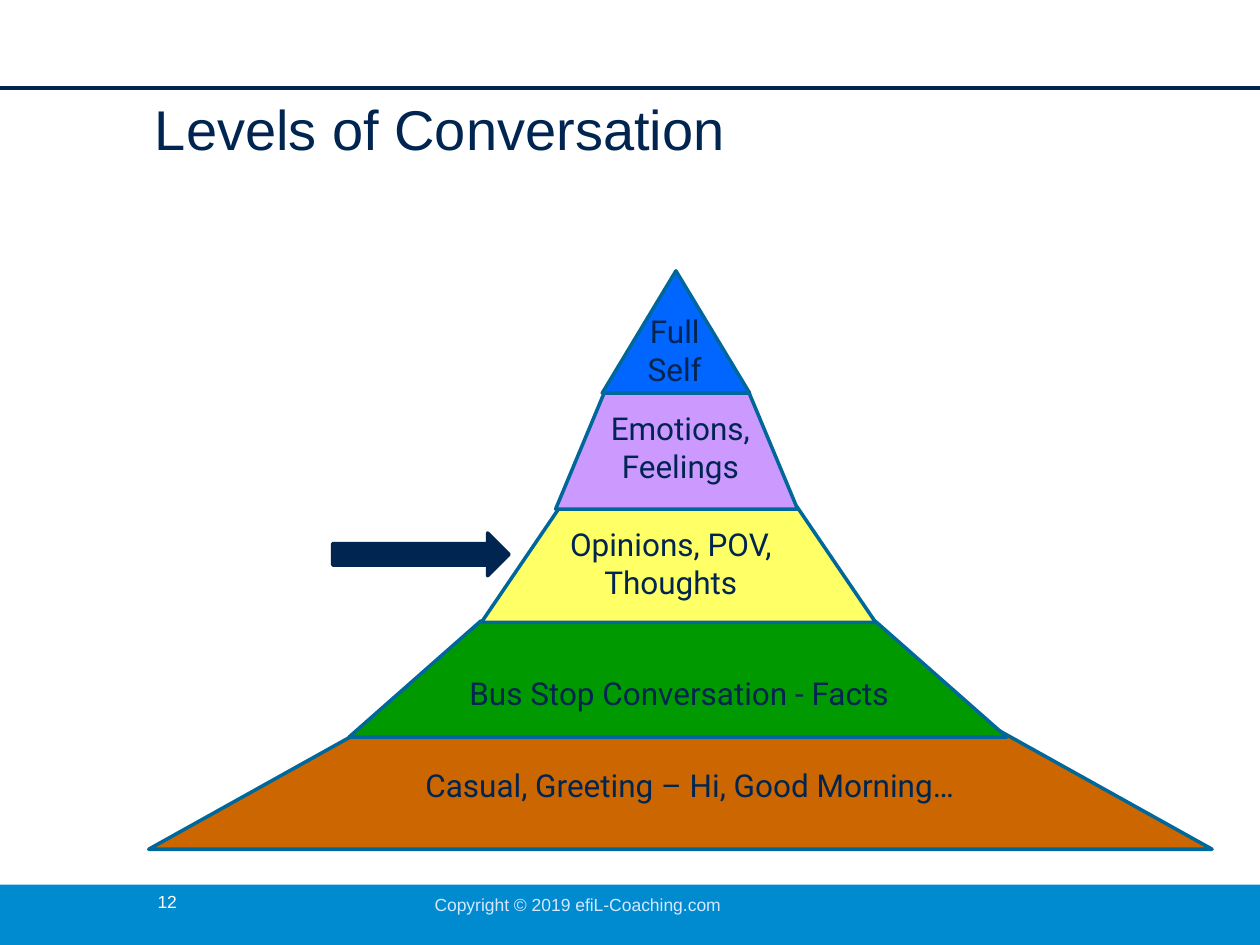
from pptx import Presentation
from pptx.dml.color import RGBColor
from pptx.enum.shapes import MSO_CONNECTOR as Connector, MSO_SHAPE as Shape
from pptx.enum.text import MSO_ANCHOR as Anchor, MSO_AUTO_SIZE as AutoSize, PP_ALIGN as Align
from pptx.oxml.ns import qn
from pptx.util import Inches, Pt
from lxml.etree import SubElement

COLORS = {
    "navy": "002551", "footer": "008BD0", "outline": "00679A", "white": "FFFFFF",
    "pale": "D4E8FF", "brown": "CC6600", "green": "009900", "yellow": "FFFF66",
    "violet": "CC99FF", "blue": "0066FF",
}
LEVELS = [
    (Shape.FLOWCHART_MANUAL_OPERATION, (1.18, 5.8, 8.44, 0.94), "brown",
     "Casual, Greeting – Hi, Good Morning…", (2.8, 6.03, 5.35, 0.4), True),
    (Shape.FLOWCHART_MANUAL_OPERATION, (2.77, 4.93, 5.22, 0.92), "green",
     "Bus Stop Conversation - Facts", (3.58, 5.3, 3.62, 0.4), False),
    (Shape.FLOWCHART_MANUAL_OPERATION, (3.82, 4.02, 3.13, 0.92), "yellow",
     "Opinions, POV, Thoughts", (4.06, 4.12, 2.53, 0.71), True),
    (Shape.FLOWCHART_MANUAL_OPERATION, (4.41, 3.12, 1.92, 0.92), "violet",
     "Emotions, Feelings", (4.61, 3.2, 1.58, 0.71), True),
    (Shape.ISOSCELES_TRIANGLE, (4.78, 2.15, 1.17, 0.97), "blue",
     "Full Self", (4.83, 2.43, 1.05, 0.71), True),
]


def color(name):
    return RGBColor.from_string(COLORS[name])


def apply(target, values):
    for name, value in values.items():
        setattr(target, name, value)


class SlideBuilder:
    label = {"name": "Roboto", "size": Pt(18)}
    heading = {"name": "Arial", "size": Pt(32), "bold": False}
    small = {"name": "Arial", "size": Pt(10)}

    def __init__(self, presentation):
        self.slide = presentation.slides.add_slide(presentation.slide_layouts[5])
        self.shapes = self.slide.shapes

    def fill_text(self, shape, text, font, font_color, align=Align.LEFT, wrap=True,
                  inset=None, line_spacing=None):
        frame = shape.text_frame
        apply(frame, {"word_wrap": wrap, "auto_size": AutoSize.NONE,
                      "vertical_anchor": Anchor.TOP})
        if inset is not None:
            sides = ("left", "top", "right", "bottom")
            apply(frame, {f"margin_{side}": Inches(inset) for side in sides})
        frame.text = text
        paragraph = frame.paragraphs[0]
        apply(paragraph, {"alignment": align, "line_spacing": line_spacing})
        run = paragraph.runs[0]
        apply(run.font, font)
        run.font.color.rgb = color(font_color)

    def title(self, text, box):
        shape = self.shapes.title
        apply(shape, dict(zip(("left", "top", "width", "height"), map(Inches, box))))
        self.fill_text(shape, text, self.heading, "navy", inset=0.05, line_spacing=0.9)

    def text(self, text, box, font, font_color, parent=None, **options):
        shape = (parent or self.shapes).add_textbox(*map(Inches, box))
        self.fill_text(shape, text, font, font_color, **options)

    def shape(self, kind, box, fill, line=None, parent=None):
        shape = (parent or self.shapes).add_shape(kind, *map(Inches, box))
        shape.shadow.inherit = False
        shape.fill.solid()
        shape.fill.fore_color.rgb = color(fill)
        if line:
            shape.line.color.rgb = color(line)
            shape.line.width = Pt(2)
        else:
            shape.line.fill.background()
        return shape

    def rule(self, start, end, line, width):
        connector = self.shapes.add_connector(
            Connector.STRAIGHT, *map(Inches, start + end))
        connector.line.color.rgb = color(line)
        connector.line.width = Pt(width)
        SubElement(connector.element.spPr, qn("a:effectLst"))

    def level(self, kind, box, fill, text, text_box, wrap):
        group = self.shapes.add_group_shape().shapes
        shape = self.shape(kind, box, fill, "outline", group)
        if kind == Shape.FLOWCHART_MANUAL_OPERATION:
            shape.rotation = 180
        self.text(text, text_box, self.label, "navy", group, align=Align.CENTER, wrap=wrap)


def main():
    presentation = Presentation()
    apply(presentation, {"slide_width": Inches(10), "slide_height": Inches(7.5)})
    builder = SlideBuilder(presentation)
    builder.shape(Shape.RECTANGLE, (0, 7.02, 10, 0.48), "footer")
    builder.rule((0, 0.7), (10, 0.7), "navy", 2.5)
    builder.title("Levels of Conversation", (1.18, 0.76, 8.44, 0.59))
    builder.text("12", (1.2, 7.02, 0.51, 0.35), builder.small, "white", inset=0.05)
    for level in LEVELS:
        builder.level(*level)
    builder.shape(Shape.RIGHT_ARROW, (2.64, 4.23, 1.4, 0.34), "navy", "navy")
    builder.text("Copyright © 2019 efiL-Coaching.com", (3.35, 7.05, 2.49, 0.27),
                 builder.small, "pale", wrap=False)
    presentation.save("out.pptx")


if __name__ == "__main__":
    main()
